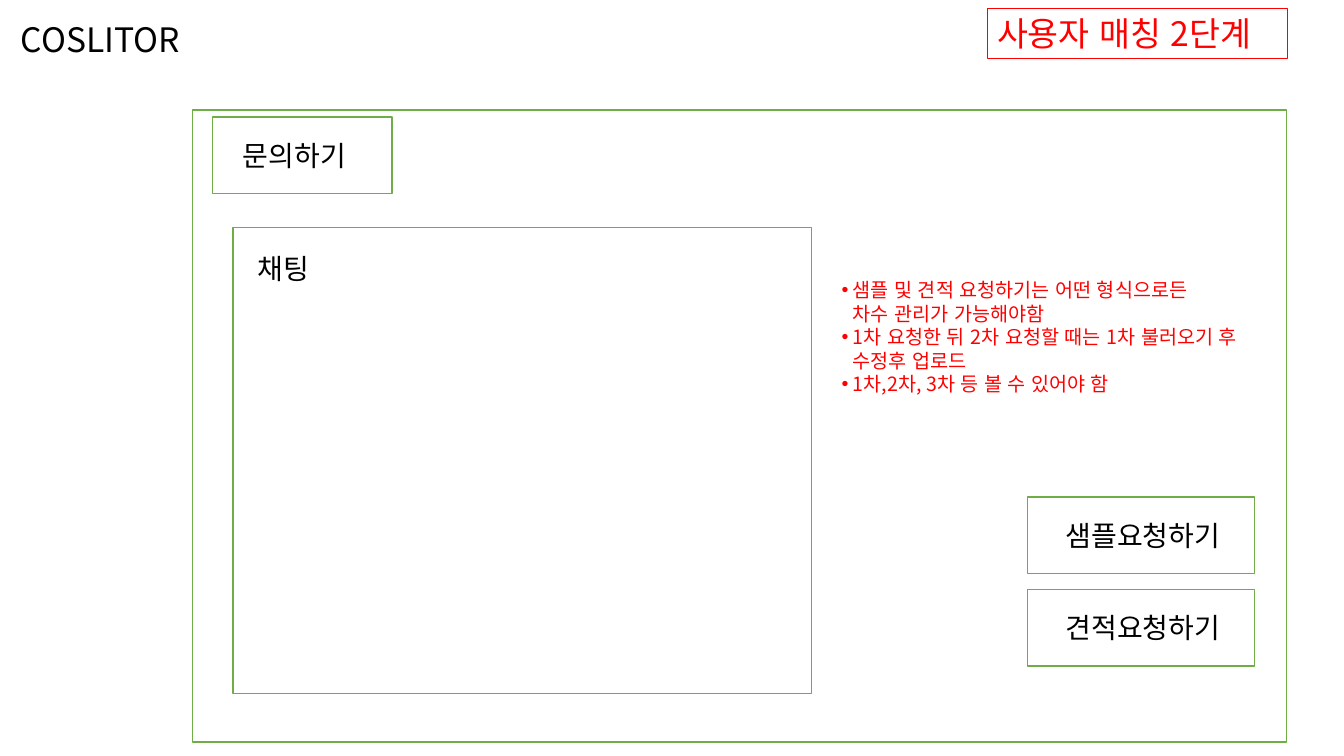
from dataclasses import dataclass

from lxml.etree import SubElement
from pptx import Presentation
from pptx.dml.color import RGBColor
from pptx.enum.lang import MSO_LANGUAGE_ID
from pptx.enum.shapes import MSO_SHAPE
from pptx.enum.text import MSO_ANCHOR, MSO_AUTO_SIZE, PP_ALIGN
from pptx.oxml.ns import qn
from pptx.util import Pt

PX = 9144
SLIDE = (1333, 750)


@dataclass(frozen=True)
class Theme:
    font: str = "Noto Sans CJK KR"
    ink: str = "000000"
    alert: str = "FF0000"
    frame: str = "70AD47"
    paper: str = "FFFFFF"
    title: int = 24
    label: int = 20
    note: int = 14


T = Theme()

BRAND = ("COSLITOR", (11, 14, 200, 50))
STAGE = ("사용자 매칭 2단계", (979, 8, 298, 50))
PAGE = (191, 109, 1085, 627)
CHAT = (231, 226, 574, 462)
INQUIRY = (211, 116, 178, 76)
LABELS = [
    ("문의하기", (231, 132, 132, 44)),
    ("채팅", (246, 245, 86, 44)),
]
BUTTONS = ["샘플요청하기", "견적요청하기"]
BUTTON = (1019, 493, 225, 76)
BUTTON_STEP = 92
BUTTON_TEXT = (28, 16, 188, 44)
NOTES_BOX = (825, 271, 422, 128)
NOTES_INDENT = 11
NOTES = [
    ["샘플 및 견적 요청하기는 어떤 형식으로든 ", "차수 관리가 가능해야함"],
    ["1차 요청한 뒤 2차 요청할 때는 1차 불러오기 후 수정후 업로드"],
    ["1차,2차, 3차 등 볼 수 있어야 함"],
]


def emu(box):
    return [v * PX for v in box]


def add_frame(s, box, color=T.frame, width=1, fill=T.paper):
    sp = s.shapes.add_shape(MSO_SHAPE.RECTANGLE, *emu(box))
    sp.shadow.inherit = False
    if fill:
        sp.fill.solid()
        sp.fill.fore_color.rgb = RGBColor.from_string(fill)
    else:
        sp.fill.background()
    sp.line.color.rgb = RGBColor.from_string(color)
    sp.line.width = Pt(width)
    return sp


def add_run(p, text, size, color):
    r = p.add_run()
    r.text = text
    r.font.size = Pt(size)
    r.font.language_id = MSO_LANGUAGE_ID.KOREAN
    r.font.color.rgb = RGBColor.from_string(color)
    r.font.name = T.font
    SubElement(r.font._element, qn("a:ea"), typeface=T.font)


def set_text(sp, paragraphs, size, color, wrap=False):
    tf = sp.text_frame
    tf.word_wrap = wrap
    tf.auto_size = MSO_AUTO_SIZE.SHAPE_TO_FIT_TEXT
    tf.vertical_anchor = MSO_ANCHOR.TOP
    for i, lines in enumerate(paragraphs):
        p = tf.add_paragraph() if i else tf.paragraphs[0]
        p.alignment = PP_ALIGN.LEFT
        for j, line in enumerate(lines):
            if j:
                p.add_line_break()
            add_run(p, line, size, color)
    return tf


def add_label(s, text, box, size=T.label):
    set_text(s.shapes.add_textbox(*emu(box)), [[text]], size, T.ink)


def add_notes(s):
    sp = s.shapes.add_textbox(*emu(NOTES_BOX))
    for p in set_text(sp, NOTES, T.note, T.alert, wrap=True).paragraphs:
        pPr = p._p.get_or_add_pPr()
        pPr.set("marL", str(NOTES_INDENT * PX))
        pPr.set("indent", str(-NOTES_INDENT * PX))
        SubElement(pPr, qn("a:buFont"), typeface="Arial")
        SubElement(pPr, qn("a:buChar"), char="•")


def main():
    prs = Presentation()
    prs.slide_width, prs.slide_height = emu(SLIDE)
    s = prs.slides.add_slide(prs.slide_layouts[6])

    add_label(s, *BRAND, T.title)
    stage, stage_box = STAGE
    sp = add_frame(s, stage_box, T.alert, 0.75, None)
    set_text(sp, [[stage]], T.title, T.alert)

    for box in (PAGE, CHAT, INQUIRY):
        add_frame(s, box)
    for text, box in LABELS:
        add_label(s, text, box)

    x, y, w, h = BUTTON
    dx, dy, tw, th = BUTTON_TEXT
    for i, text in enumerate(BUTTONS):
        top = y + i * BUTTON_STEP
        add_frame(s, (x, top, w, h))
        add_label(s, text, (x + dx, top + dy, tw, th))

    add_notes(s)
    prs.save("out.pptx")


if __name__ == "__main__":
    main()
